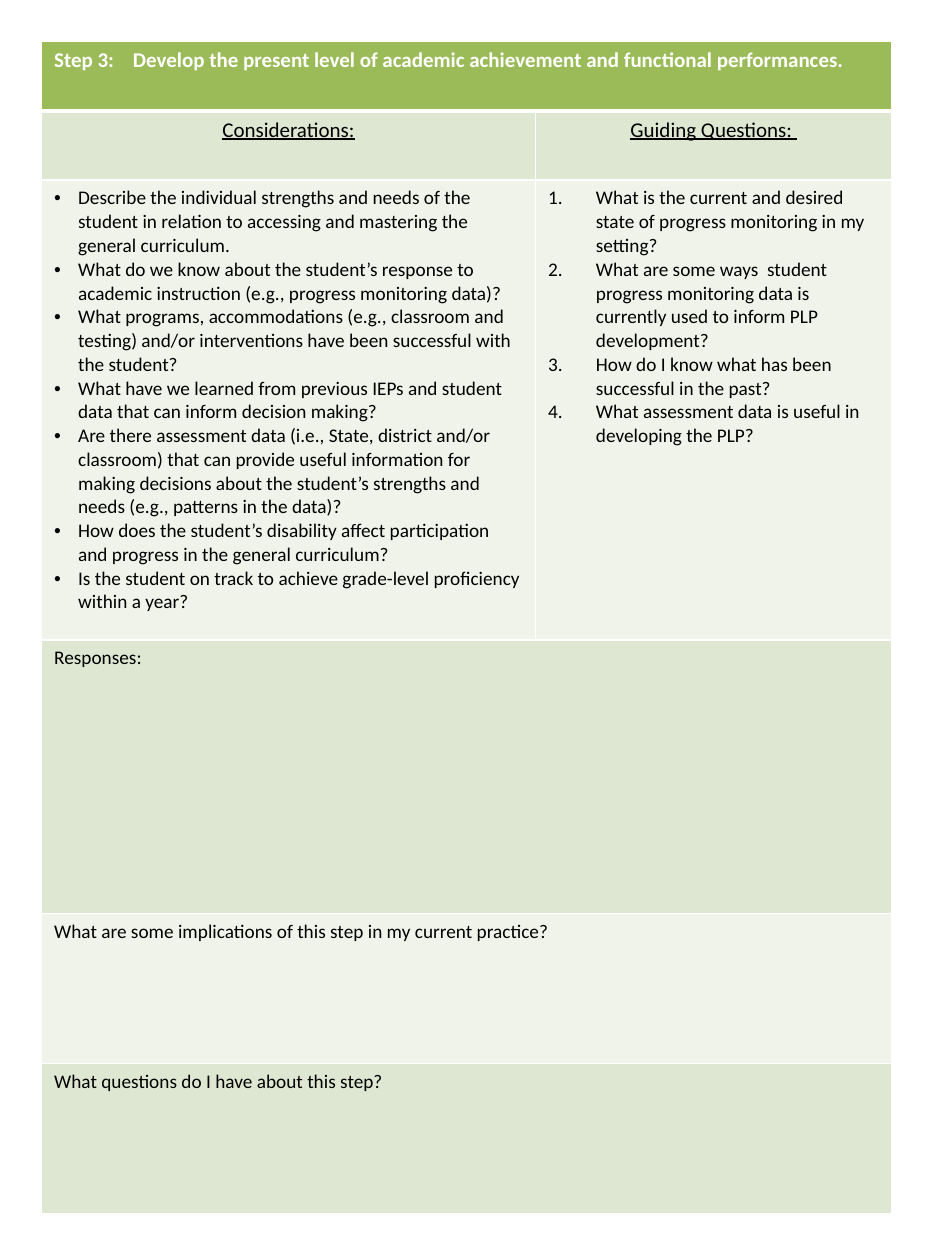
from lxml.etree import SubElement
from pptx import Presentation
from pptx.dml.color import RGBColor
from pptx.enum.text import PP_ALIGN
from pptx.oxml.ns import qn
from pptx.util import Inches, Pt

WHITE = RGBColor(0xFF, 0xFF, 0xFF)
BLACK = RGBColor(0x00, 0x00, 0x00)
GREEN = RGBColor(0x9B, 0xBB, 0x59)
SAGE = RGBColor(0xDE, 0xE7, 0xD1)
PALE = RGBColor(0xEF, 0xF3, 0xEA)

COLS = [3.92, 2.83]
ROWS = [0.55, 0.55, 3.65, 2.17, 1.19, 1.19]
FILLS = [GREEN, SAGE, PALE, SAGE, PALE, SAGE]
MERGED = [0, 3, 4, 5]

CONSIDERATIONS = [
    "Describe the individual strengths and needs of the student in relation to accessing and mastering the general curriculum.",
    "What do we know about the student’s response to academic instruction (e.g., progress monitoring data)?",
    "What programs, accommodations (e.g., classroom and testing) and/or interventions have been successful with the student?",
    "What have we learned from previous IEPs and student data that can inform decision making?",
    "Are there assessment data (i.e., State, district and/or classroom) that can provide useful information for making decisions about the student’s strengths and needs (e.g., patterns in the data)?",
    "How does the student’s disability affect participation and progress in the general curriculum?",
    "Is the student on track to achieve grade-level proficiency within a year?",
]
QUESTIONS = [
    "What is the current and desired state of progress monitoring in my setting?",
    "What are some ways  student progress monitoring data is  currently used to inform PLP development?",
    "How do I know what has been successful in the past?",
    "What assessment data is useful in developing the PLP?",
]


def write(cell, lines, size=11, color=BLACK, bold=False, underline=False,
          align=PP_ALIGN.LEFT, indent=0, bullet=None):
    tf = cell.text_frame
    for i, line in enumerate(lines):
        p = tf.add_paragraph() if i else tf.paragraphs[0]
        p.alignment = align
        r = p.add_run()
        r.text = line
        r.font.name = "Calibri"
        r.font.size = Pt(size)
        r.font.bold = bold
        r.font.underline = underline
        r.font.color.rgb = color
        if bullet:
            pPr = p._p.get_or_add_pPr()
            pPr.set("marL", str(Inches(indent)))
            pPr.set("indent", str(-Inches(indent)))
            tag, font, attrs = bullet
            SubElement(pPr, qn("a:buFont"), typeface=font)
            SubElement(pPr, qn(tag), **attrs)


def border(cell, side, width):
    tcPr = cell._tc.get_or_add_tcPr()
    ln = SubElement(tcPr, qn("a:ln" + side), w=str(Pt(width)))
    fill = SubElement(ln, qn("a:solidFill"))
    SubElement(fill, qn("a:srgbClr"), val=str(WHITE))


prs = Presentation()
prs.slide_width, prs.slide_height = Inches(7.5), Inches(10)
s = prs.slides.add_slide(prs.slide_layouts[6])
W, H = prs.slide_width, prs.slide_height

table = s.shapes.add_table(len(ROWS), len(COLS), Inches(0.33), Inches(0.33),
                           Inches(sum(COLS)), Inches(sum(ROWS))).table
for col, width in zip(table.columns, COLS):
    col.width = Inches(width)
for i, (row, height) in enumerate(zip(table.rows, ROWS)):
    row.height = Inches(height)
    for cell in row.cells:
        for side in "LRTB":
            heavy = (i, side) in [(0, "B"), (1, "T")]
            border(cell, side, 3 if heavy else 1)
        cell.fill.solid()
        cell.fill.fore_color.rgb = FILLS[i]
for i in MERGED:
    table.cell(i, 0).merge(table.cell(i, 1))

write(table.cell(0, 0),
      ["Step 3:    Develop the present level of academic achievement and functional performances."],
      size=12, color=WHITE, bold=True)
for j, heading in enumerate(["Considerations:", "Guiding Questions: "]):
    write(table.cell(1, j), [heading], size=12, underline=True, align=PP_ALIGN.CENTER)
write(table.cell(2, 0), CONSIDERATIONS, indent=0.19,
      bullet=("a:buChar", "Arial", {"char": "•"}))
write(table.cell(2, 1), QUESTIONS, indent=0.38,
      bullet=("a:buAutoNum", "+mj-lt", {"type": "arabicPeriod"}))
for i, prompt in enumerate(["Responses:",
                            "What are some implications of this step in my current practice?",
                            "What questions do I have about this step?"], start=3):
    write(table.cell(i, 0), [prompt])

prs.save("out.pptx")
